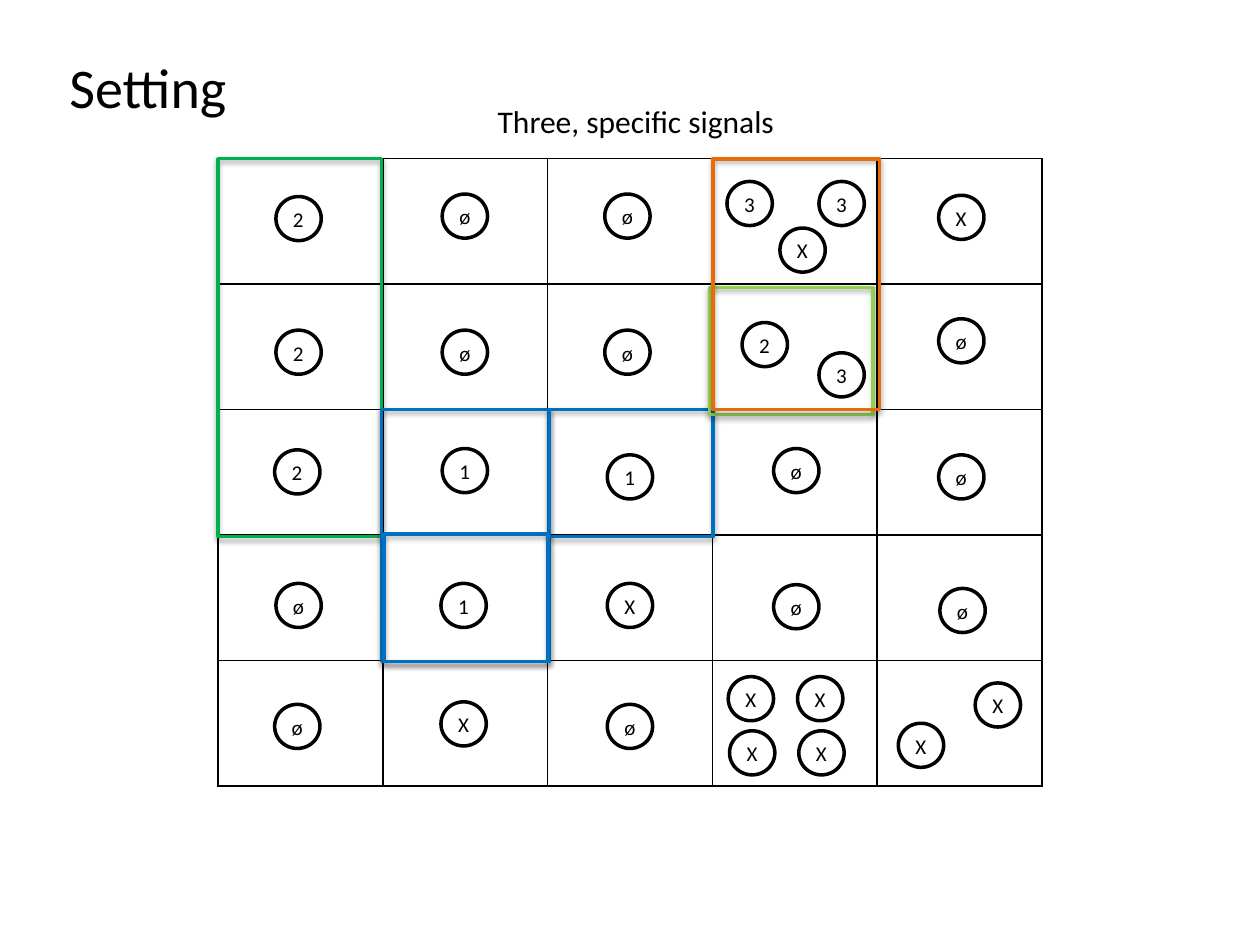
from lxml import etree
from pptx import Presentation, util as u
from pptx.dml.color import RGBColor
from pptx.enum import shapes, text
from pptx.oxml.ns import qn

THEME = {
    "font": "Calibri", "ink": "000000", "paper": "FFFFFF",
    "title": 32, "caption": 18, "symbol": 12,
    "border": 1, "outline": 2,
    "green": "00B050", "blue": "0070C0", "lime": "92D050", "orange": "E46C0A",
}

# Words: content, size, box (left, top, width, height)
TITLE = ("Setting", "title", (0.5, 0.3, 1.49, 0.77))
CAPTION = ("Three, specific signals", "caption", (3.9, 0.76, 2.33, 0.4))

# Grid
GRID_LEFT, GRID_TOP, GRID_WIDTH, GRID_HEIGHT = 1.73, 1.26, 6.54, 4.98
GRID_SIZE = 5

# Top-left corners of the tokens carrying each symbol
TOKENS = {
    "1": [(3.51, 3.56), (4.82, 3.61), (3.5, 4.63)],
    "2": [(2.19, 1.56), (2.19, 2.62), (2.18, 3.57), (5.89, 2.56)],
    "3": [(5.77, 1.44), (6.5, 1.44), (6.5, 2.8)],
    "ø": [(2.19, 4.63), (2.18, 5.59), (4.82, 5.59), (3.51, 1.54), (3.51, 2.62),
          (4.8, 1.54), (4.8, 2.62), (7.45, 2.53), (7.45, 3.61), (6.14, 3.56),
          (6.14, 4.64), (7.46, 4.67)],
    "X": [(3.5, 5.57), (4.82, 4.63), (5.78, 5.37), (6.33, 5.37), (5.79, 5.8),
          (6.34, 5.8), (7.74, 5.42), (7.13, 5.74), (7.45, 1.55), (6.19, 1.81)],
}
TOKEN_WIDTH, TOKEN_HEIGHT = 0.36, 0.35
LABEL_WIDTH, LABEL_HEIGHT, LABEL_DROP = 0.19, 0.3, 0.03

# Frames marking the signal areas, back to front
FRAMES = [
    ("green", (1.73, 1.26, 1.3, 3)),
    ("blue", (3.03, 3.25, 1.33, 2)),
    ("blue", (4.36, 3.25, 1.3, 1.01)),
    ("lime", (5.63, 2.28, 1.3, 1.01)),
    ("orange", (5.66, 1.26, 1.32, 1.99)),
    ("blue", (3.05, 4.24, 1.3, 1.01)),
]


def inches(box):
    return [u.Inches(length) for length in box]


def color(name):
    return RGBColor.from_string(THEME[name])


def add_text(parent, words, size, box, anchor=text.MSO_ANCHOR.TOP):
    frame = parent.add_textbox(*inches(box)).text_frame
    frame.word_wrap = False
    frame.vertical_anchor = anchor
    frame.margin_left = frame.margin_right = u.Inches(0.05)
    frame.margin_top = frame.margin_bottom = u.Inches(0.05)
    frame.text = words
    font = frame.paragraphs[0].runs[0].font
    font.name, font.size = THEME["font"], u.Pt(THEME[size])
    font.color.rgb = color("ink")


def add_outline(parent, preset, box, line):
    shape = parent.add_shape(preset, *inches(box))
    shape.shadow.inherit = False
    shape.line.color.rgb = color(line)
    shape.line.width = u.Pt(THEME["outline"])
    return shape


def set_borders(cell):
    properties = cell._tc.get_or_add_tcPr()
    for index, side in enumerate(("lnL", "lnR", "lnT", "lnB")):
        border = etree.Element(qn(f"a:{side}"), w=str(u.Pt(THEME["border"])))
        fill = etree.SubElement(border, qn("a:solidFill"))
        etree.SubElement(fill, qn("a:srgbClr"), val=THEME["ink"])
        properties.insert(index, border)


def add_grid(slide):
    box = inches((GRID_LEFT, GRID_TOP, GRID_WIDTH, GRID_HEIGHT))
    table = slide.shapes.add_table(GRID_SIZE, GRID_SIZE, *box).table
    table.first_row = table.horz_banding = False
    for cell in table.iter_cells():
        cell.fill.background()
        set_borders(cell)


def add_token(slide, symbol, left, top):
    group = slide.shapes.add_group_shape().shapes
    circle = add_outline(group, shapes.MSO_SHAPE.OVAL,
                         (left, top, TOKEN_WIDTH, TOKEN_HEIGHT), "ink")
    circle.fill.solid()
    circle.fill.fore_color.rgb = color("paper")
    label_left = left + (TOKEN_WIDTH - LABEL_WIDTH) / 2
    add_text(group, symbol, "symbol",
             (label_left, top + LABEL_DROP, LABEL_WIDTH, LABEL_HEIGHT))


def add_frame(slide, line, box):
    frame = add_outline(slide.shapes, shapes.MSO_SHAPE.RECTANGLE, box, line)
    frame.fill.background()
    effects = frame._element.spPr.find(qn("a:effectLst"))
    shadow = etree.SubElement(effects, qn("a:outerShdw"), blurRad=str(u.Pt(3)),
                              dist=str(u.Pt(1.8)), dir="5400000", rotWithShape="0")
    tint = etree.SubElement(shadow, qn("a:srgbClr"), val=THEME["ink"])
    etree.SubElement(tint, qn("a:alpha"), val="35000")


def main():
    presentation = Presentation()
    presentation.slide_width, presentation.slide_height = inches((10, 7.5))
    slide = presentation.slides.add_slide(presentation.slide_layouts[6])

    add_text(slide.shapes, *TITLE, anchor=text.MSO_ANCHOR.MIDDLE)
    add_grid(slide)
    for symbol, corners in TOKENS.items():
        for left, top in corners:
            add_token(slide, symbol, left, top)
    add_text(slide.shapes, *CAPTION)
    for line, box in FRAMES:
        add_frame(slide, line, box)

    presentation.save("out.pptx")


if __name__ == "__main__":
    main()
